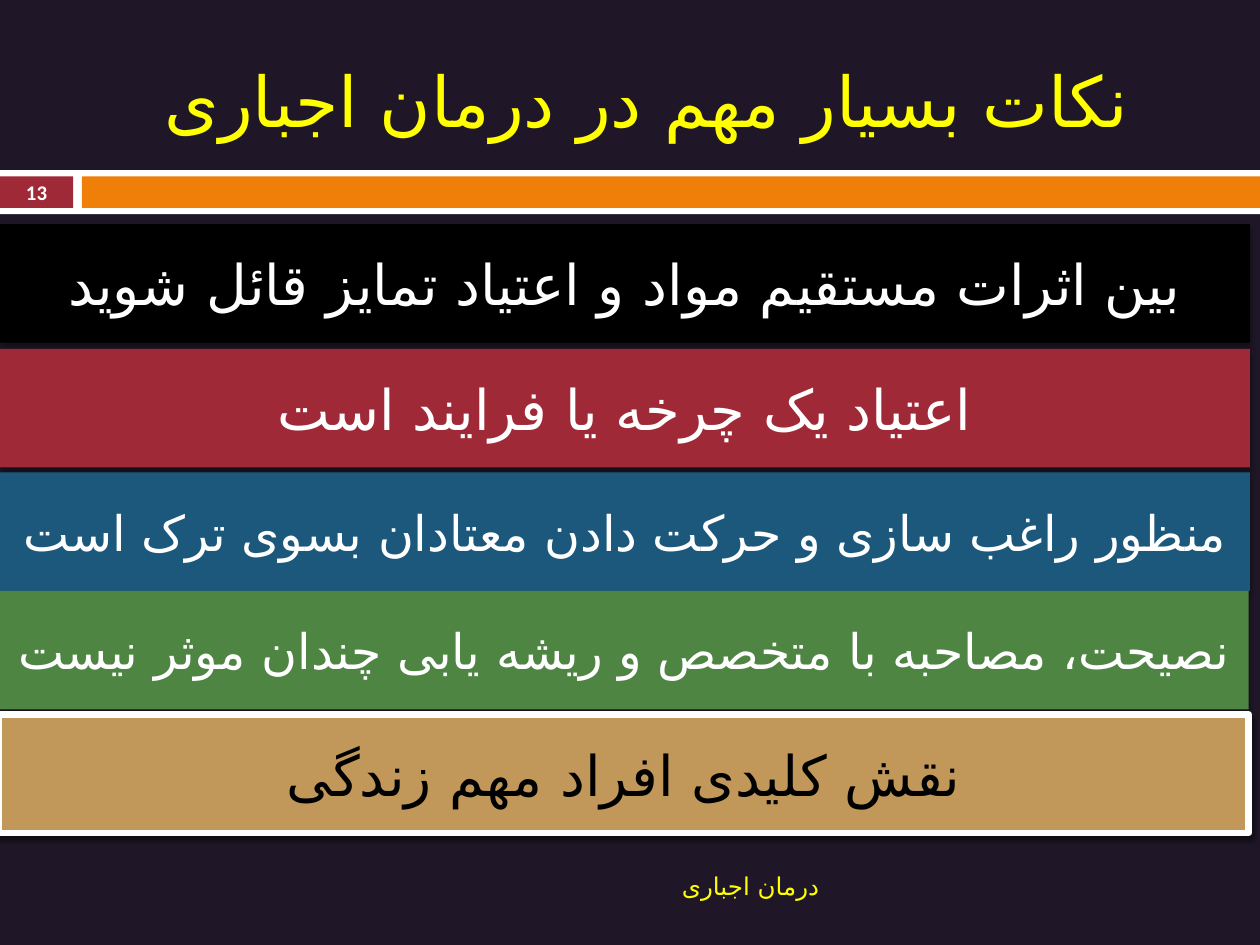
import pptx
import pptx.dml.color
import pptx.enum.shapes
import pptx.enum.text
import pptx.oxml
import pptx.oxml.ns
import pptx.util
from pptx.util import Inches

ALIGN = pptx.enum.text.PP_ALIGN
DRAWING_NAMESPACE = pptx.oxml.ns.nsdecls("a")


def color(hex_string):
    return pptx.dml.color.RGBColor.from_string(hex_string)


def write_text(shape, text, size=32, ink="FFFFFF", bold=False, align=ALIGN.CENTER,
               rtl=False, margin=0.1):
    frame = shape.text_frame
    frame.word_wrap = True
    frame.vertical_anchor = pptx.enum.text.MSO_ANCHOR.MIDDLE
    frame.margin_left = frame.margin_right = Inches(margin)
    frame.margin_top = frame.margin_bottom = Inches(margin / 2)
    paragraph = frame.paragraphs[0]
    paragraph.alignment = align
    if rtl:
        paragraph._p.get_or_add_pPr().set("rtl", "1")
    run = paragraph.add_run()
    run.text = text
    run.font.name = "Calibri"
    run.font.size = pptx.util.Pt(size)
    run.font.bold = bold
    run.font.color.rgb = color(ink)
    run.font._element.append(pptx.oxml.parse_xml(
        f'<a:cs {DRAWING_NAMESPACE} typeface="DejaVu Sans"/>'))


class SlideBuilder:
    def __init__(self, presentation, background):
        self.slide = presentation.slides.add_slide(presentation.slide_layouts[6])
        self.slide.background.fill.solid()
        self.slide.background.fill.fore_color.rgb = color(background)

    def rectangle(self, left, top, width, height, fill, line=None):
        shape = self.slide.shapes.add_shape(
            pptx.enum.shapes.MSO_SHAPE.RECTANGLE,
            Inches(left), Inches(top), Inches(width), Inches(height))
        shape.shadow.inherit = False
        shape.fill.solid()
        shape.fill.fore_color.rgb = color(fill)
        if line:
            shape.line.color.rgb = color(line)
            shape.line.width = pptx.util.Pt(3.75)
        else:
            shape.line.fill.background()
        return shape

    def text_box(self, left, top, width, height, text, **text_format):
        box = self.slide.shapes.add_textbox(
            Inches(left), Inches(top), Inches(width), Inches(height))
        write_text(box, text, **text_format)

    def banner(self, left, top, fill, text, line=None, opacity=35, distance=2,
               **text_format):
        shape = self.rectangle(left, top, 9.92, 0.94, fill, line)
        effects = shape._element.spPr.find(pptx.oxml.ns.qn("a:effectLst"))
        effects.append(pptx.oxml.parse_xml(
            f'<a:outerShdw {DRAWING_NAMESPACE} blurRad="{pptx.util.Pt(3)}" '
            f'dist="{pptx.util.Pt(distance)}" dir="5400000" rotWithShape="0">'
            f'<a:srgbClr val="000000"><a:alpha val="{opacity * 1000}"/></a:srgbClr>'
            '</a:outerShdw>'))
        write_text(shape, text, **text_format)


def main():
    presentation = pptx.Presentation()
    presentation.slide_width = Inches(10)
    presentation.slide_height = Inches(7.5)
    builder = SlideBuilder(presentation, "1F1727")

    builder.rectangle(0, 1.35, 10, 0.35, "FFFFFF")
    builder.rectangle(0, 1.4, 0.58, 0.25, "9F2936")
    builder.rectangle(0.65, 1.4, 9.35, 0.25, "F07F09")
    builder.text_box(0.67, 0.25, 8.92, 1.08, "نکات بسیار مهم در درمان اجباری",
                     size=40, ink="FFFF00")
    builder.text_box(0.67, 6.83, 5.93, 0.4, "درمان اجباری",
                     size=14, ink="FFFF00", align=ALIGN.RIGHT)
    builder.text_box(0, 1.39, 0.58, 0.27, "13", size=11.9, bold=True, margin=0)

    builder.banner(0, 1.78, "000000", "بین اثرات مستقیم مواد و اعتیاد تمایز قائل شوید")
    builder.banner(0, 2.77, "9F2936", "اعتیاد یک چرخه یا فرایند است")
    builder.banner(0, 3.75, "1B587C",
                   "منظور راغب سازی و حرکت دادن معتادان بسوی ترک است", size=28)
    builder.banner(-0.01, 4.69, "4E8542",
                   "نصیحت، مصاحبه با متخصص و ریشه یابی چندان موثر نیست",
                   size=28, rtl=True)
    builder.banner(-0.01, 5.67, "C19859", "نقش کلیدی افراد مهم زندگی",
                   line="FFFFFF", opacity=45, distance=2.4, ink="000000", rtl=True)

    presentation.save("out.pptx")


if __name__ == "__main__":
    main()
